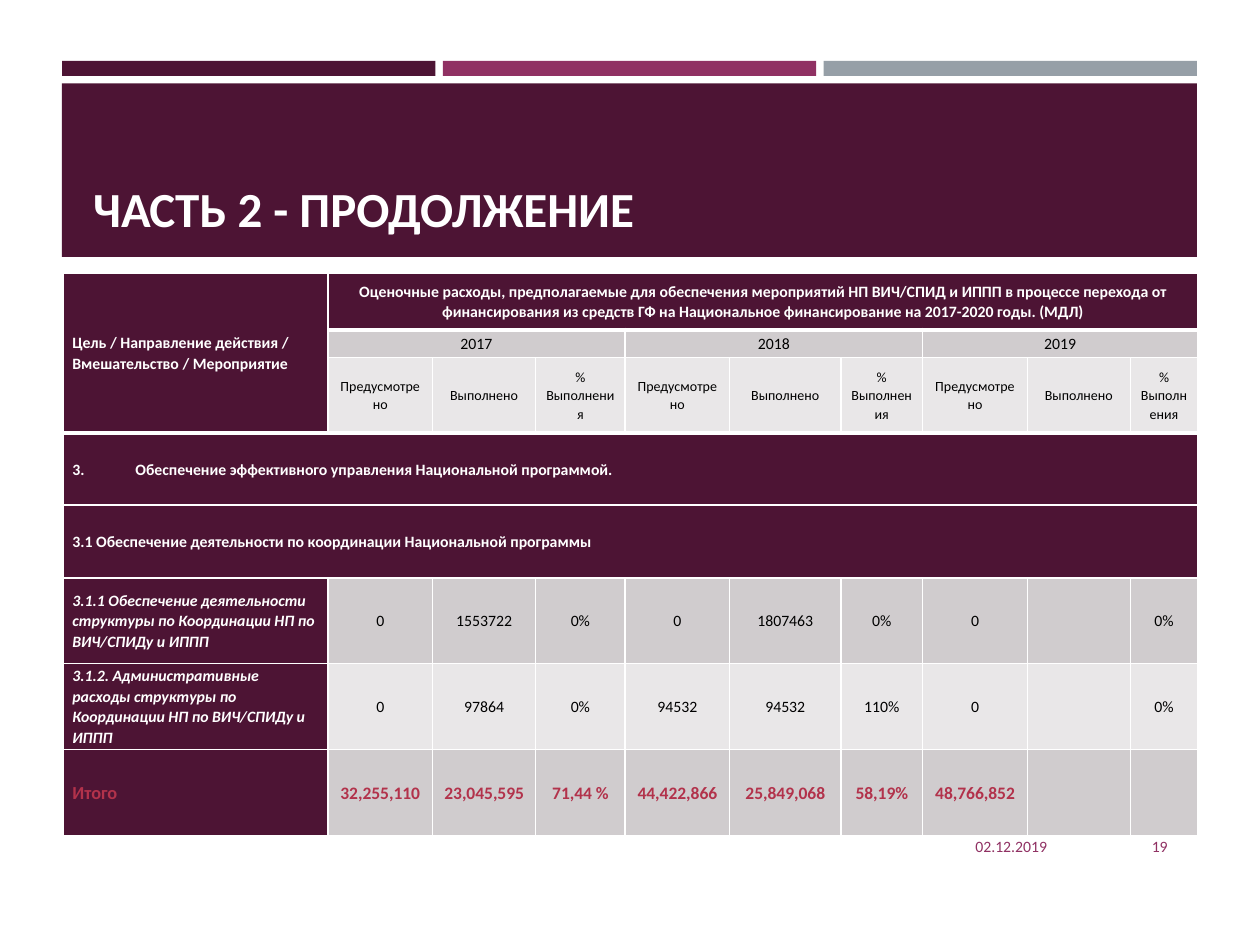
from lxml import etree
from pptx import Presentation
from pptx.dml.color import RGBColor
from pptx.enum import shapes, text
from pptx.oxml import ns
from pptx.util import Cm, Pt

PLUM = RGBColor(0x4D, 0x14, 0x34)
MAGENTA = RGBColor(0x90, 0x31, 0x63)
STEEL = RGBColor(0x96, 0x9F, 0xA7)
RED = RGBColor(0xB2, 0x32, 0x4B)
GREY = RGBColor(0xD0, 0xCC, 0xCE)
LIGHT = RGBColor(0xE9, 0xE7, 0xE8)
BLACK = RGBColor(0, 0, 0)
WHITE = RGBColor(0xFF, 0xFF, 0xFF)

LEFT, CENTER, RIGHT = text.PP_ALIGN.LEFT, text.PP_ALIGN.CENTER, text.PP_ALIGN.RIGHT
MIDDLE, BOTTOM = text.MSO_ANCHOR.MIDDLE, text.MSO_ANCHOR.BOTTOM

COLUMN_WIDTHS = [5.33, 2.11, 2.08, 1.8, 2.11, 2.24, 1.65, 2.11, 2.08, 1.35]
ROW_HEIGHTS = [1.14, 0.56, 1.52, 1.45, 1.47, 1.73, 1.73, 1.73]
YEARS = ["2017", "2018", "2019"]
MEASURES = ["Предусмотрено", "Выполнено", "% Выполнения"]
SECTIONS = [
    "3.\tОбеспечение эффективного управления Национальной программой.",
    "3.1 Обеспечение деятельности по координации Национальной программы",
]
ACTIVITIES = [
    ("3.1.1 Обеспечение деятельности структуры по Координации НП по ВИЧ/СПИДу и ИППП",
     ["0", "1553722", "0%", "0", "1807463", "0%", "0", "", "0%"], GREY),
    ("3.1.2. Административные расходы структуры по Координации НП по ВИЧ/СПИДу и ИППП",
     ["0", "97864", "0%", "94532", "94532", "110%", "0", "", "0%"], LIGHT),
]
TOTALS = ["32,255,110", "23,045,595", "71,44 %", "44,422,866", "25,849,068",
          "58,19%", "48,766,852", "", ""]
THICK_RULES = (1, 3)  # rows with a thick rule above them


def write(frame, words, size=9, color=BLACK, bold=False, italic=False, align=LEFT, spacing=None):
    paragraph = frame.paragraphs[0]
    paragraph.alignment = align
    paragraph.line_spacing = spacing
    run = paragraph.add_run()
    run.text = words
    font = run.font
    font.name, font.size, font.bold, font.italic = "Calibri", Pt(size), bold, italic
    font.color.rgb = color
    return paragraph


def add_text(slide, words, left, top, width, height, anchor=MIDDLE, **style):
    frame = slide.shapes.add_textbox(Cm(left), Cm(top), Cm(width), Cm(height)).text_frame
    frame.word_wrap = True
    frame.vertical_anchor = anchor
    write(frame, words, **style)


def add_block(slide, left, top, width, height, color):
    block = slide.shapes.add_shape(
        shapes.MSO_SHAPE.RECTANGLE, Cm(left), Cm(top), Cm(width), Cm(height))
    block.shadow.inherit = False
    block.fill.solid()
    block.fill.fore_color.rgb = color
    block.line.fill.background()


def add_header(slide, left, top, width, title):
    gap, strip = 0.15, 0.3
    strip_width = (width - 2 * gap) / 3
    for index, color in enumerate((PLUM, MAGENTA, STEEL)):
        add_block(slide, left + index * (strip_width + gap), top, strip_width, strip, color)
    add_block(slide, left, top + 0.45, width, 3.5, PLUM)
    add_text(slide, title, left + 0.38, top + 0.68, width - 0.7, 3, anchor=BOTTOM,
             size=28, color=WHITE, bold=True)


def add_footer(slide, left, top, height, date, number):
    style = dict(color=MAGENTA, align=RIGHT)
    add_text(slide, date, left, top, 5.92, height, **style)
    add_text(slide, number, left + 6.22, top, 2.13, height, **style)


def set_borders(cell, row):
    properties = cell._tc.get_or_add_tcPr()
    widths = {"lnL": 1, "lnR": 1,
              "lnT": 3 if row in THICK_RULES else 1,
              "lnB": 3 if row + 1 in THICK_RULES else 1}
    for position, (side, width) in enumerate(widths.items()):
        line = etree.Element(ns.qn("a:" + side), w=str(Pt(width)))
        fill = etree.SubElement(line, ns.qn("a:solidFill"))
        etree.SubElement(fill, ns.qn("a:srgbClr"), val=str(WHITE))
        properties.insert(position, line)


def add_tab_stop(paragraph, position):
    tabs = etree.SubElement(paragraph._p.get_or_add_pPr(), ns.qn("a:tabLst"))
    etree.SubElement(tabs, ns.qn("a:tab"), pos=str(Cm(position)), algn="l")


def fill_cell(table, row, column, words, fill, span=(1, 1), **style):
    cell = table.cell(row, column)
    if span != (1, 1):
        cell.merge(table.cell(row + span[0] - 1, column + span[1] - 1))
    cell.fill.solid()
    cell.fill.fore_color.rgb = fill
    cell.vertical_anchor = MIDDLE
    cell.margin_left = cell.margin_right = Cm(0.18)
    cell.margin_top = cell.margin_bottom = 0
    if words:
        paragraph = write(cell.text_frame, words, spacing=1.07, **style)
        if "\t" in words:
            add_tab_stop(paragraph, 1.27)


def fill_row(table, row, label, values, fill, label_style, value_style):
    fill_cell(table, row, 0, label, PLUM, bold=True, **label_style)
    for column, value in enumerate(values, 1):
        fill_cell(table, row, column, value, fill, align=CENTER, **value_style)


def add_expense_table(slide, left, top):
    frame = slide.shapes.add_table(
        len(ROW_HEIGHTS), len(COLUMN_WIDTHS), Cm(left), Cm(top),
        Cm(sum(COLUMN_WIDTHS)), Cm(sum(ROW_HEIGHTS)))
    table = frame.table
    for column, width in zip(table.columns, COLUMN_WIDTHS):
        column.width = Cm(width)
    for row, height in zip(table.rows, ROW_HEIGHTS):
        row.height = Cm(height)

    heading = dict(color=WHITE, bold=True)
    fill_cell(table, 0, 0, "Цель / Направление действия / Вмешательство / Мероприятие",
              PLUM, span=(3, 1), **heading)
    fill_cell(table, 0, 1,
              "Оценочные расходы, предполагаемые для обеспечения мероприятий НП ВИЧ/СПИД и ИППП "
              "в процессе перехода от финансирования из средств ГФ на Национальное "
              "финансирование на 2017-2020 годы. (МДЛ)",
              PLUM, span=(1, 9), align=CENTER, **heading)
    for index, year in enumerate(YEARS):
        first = 1 + index * len(MEASURES)
        fill_cell(table, 1, first, year, GREY, span=(1, len(MEASURES)), align=CENTER)
        for column, measure in enumerate(MEASURES, first):
            fill_cell(table, 2, column, measure, LIGHT, size=8, align=CENTER)
    for row, section in enumerate(SECTIONS, 3):
        fill_cell(table, row, 0, section, PLUM, span=(1, len(COLUMN_WIDTHS)), **heading)
    for row, (label, values, fill) in enumerate(ACTIVITIES, 5):
        fill_row(table, row, label, values, fill, dict(color=WHITE, italic=True), {})
    fill_row(table, 7, "Итого", TOTALS, GREY, dict(size=10.5, color=RED),
             dict(size=10, color=RED, bold=True))

    for row in range(len(ROW_HEIGHTS)):
        for column in range(len(COLUMN_WIDTHS)):
            set_borders(table.cell(row, column), row)


def main():
    presentation = Presentation()
    presentation.slide_width, presentation.slide_height = Cm(25.4), Cm(19.05)
    slide = presentation.slides.add_slide(presentation.slide_layouts[6])
    add_header(slide, 1.25, 1.23, 22.88, "ЧАСТЬ 2 - ПРОДОЛЖЕНИЕ")
    add_footer(slide, 15.44, 16.54, 1.02, "02.12.2019", "19")
    add_expense_table(slide, 1.28, 5.51)
    presentation.save("out.pptx")


if __name__ == "__main__":
    main()
